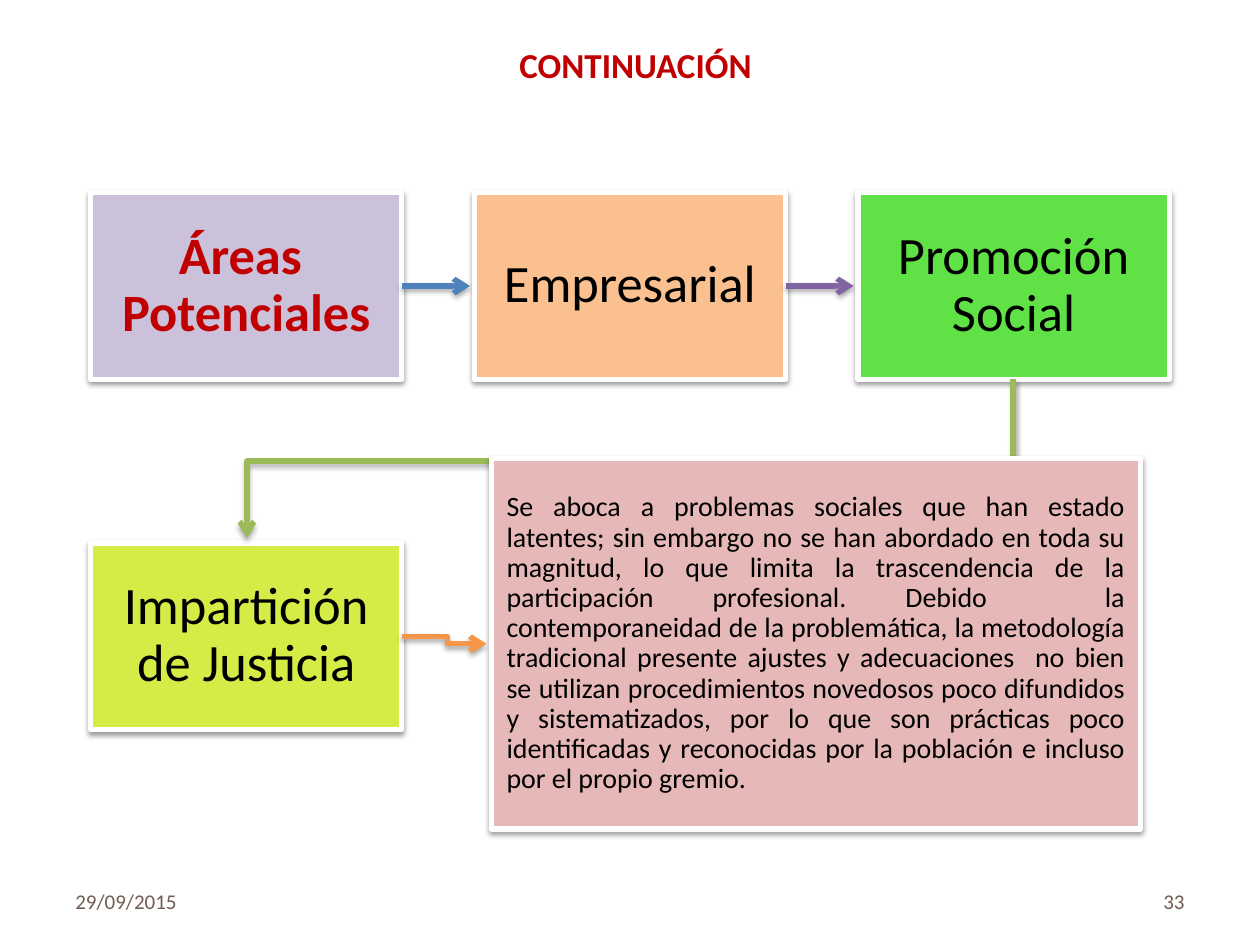
import pptx
import pptx.util
import pptx.oxml
import pptx.oxml.ns
import pptx.dml.color
import pptx.enum.shapes
import pptx.enum.text

Inches = pptx.util.Inches
Pt = pptx.util.Pt
RGBColor = pptx.dml.color.RGBColor
ALIGN = pptx.enum.text.PP_ALIGN
MIDDLE = pptx.enum.text.MSO_ANCHOR.MIDDLE
RECTANGLE = pptx.enum.shapes.MSO_SHAPE.RECTANGLE
STRAIGHT = pptx.enum.shapes.MSO_CONNECTOR.STRAIGHT

RED = RGBColor(0xC0, 0x00, 0x00)
BLACK = RGBColor(0x00, 0x00, 0x00)
WHITE = RGBColor(0xFF, 0xFF, 0xFF)
BROWN = RGBColor(0x72, 0x5B, 0x51)
LILAC = RGBColor(0xCC, 0xC1, 0xDA)
PEACH = RGBColor(0xFA, 0xC0, 0x90)
GREEN = RGBColor(0x60, 0xE1, 0x46)
LIME = RGBColor(0xD5, 0xEC, 0x46)
PINK = RGBColor(0xE6, 0xB9, 0xB8)
BLUE = RGBColor(0x4F, 0x81, 0xBD)
PURPLE = RGBColor(0x80, 0x64, 0xA2)
OLIVE = RGBColor(0x9B, 0xBB, 0x59)
ORANGE = RGBColor(0xF7, 0x96, 0x46)


def write(part, text, size, color, align, bold=False, inset=None, spacing=None):
    frame = part.text_frame
    frame.word_wrap = True
    frame.vertical_anchor = MIDDLE
    if inset is not None:
        frame.margin_left = frame.margin_right = Inches(inset)
        frame.margin_top = frame.margin_bottom = Inches(inset)
    paragraph = frame.paragraphs[0]
    paragraph.alignment = align
    paragraph.line_spacing = spacing
    run = paragraph.add_run()
    run.text = text
    run.font.name = "Calibri"
    run.font.size = Pt(size)
    run.font.bold = bold
    run.font.color.rgb = color


def outline(part, color, opacity, distance, arrow=False):
    part.line.color.rgb = color
    part.line.width = Pt(3)
    namespace = pptx.oxml.ns.nsdecls("a")
    properties = part._element.spPr
    if arrow:
        properties.find(pptx.oxml.ns.qn("a:ln")).append(
            pptx.oxml.parse_xml(f'<a:tailEnd {namespace} type="arrow"/>'))
    properties.append(pptx.oxml.parse_xml(
        f'<a:effectLst {namespace}><a:outerShdw blurRad="{Pt(3.1)}" dist="{Pt(distance)}" '
        f'dir="5400000" rotWithShape="0"><a:srgbClr val="000000">'
        f'<a:alpha val="{opacity * 1000}"/></a:srgbClr></a:outerShdw></a:effectLst>'))


presentation = pptx.Presentation()
presentation.slide_width = Inches(10)
presentation.slide_height = Inches(7.5)
shapes = presentation.slides.add_slide(presentation.slide_layouts[6]).shapes

for text, left, top, width, height, size, color, align, bold in [
    ("CONTINUACIÓN", 0.83, 0.29, 8.43, 0.44, 20, RED, ALIGN.CENTER, True),
    ("29/09/2015", 0.5, 6.95, 2.33, 0.4, 12, BROWN, ALIGN.LEFT, False),
    ("33", 7.17, 6.95, 2.33, 0.4, 12, BROWN, ALIGN.RIGHT, False),
]:
    label = shapes.add_textbox(Inches(left), Inches(top), Inches(width), Inches(height))
    write(label, text, size, color, align, bold)

areas = []
for text, column, top, fill, color, bold in [
    ("Áreas  Potenciales", 0, 1.53, LILAC, RED, True),
    ("Empresarial", 1, 1.53, PEACH, BLACK, False),
    ("Promoción Social", 2, 1.53, GREEN, BLACK, False),
    ("Impartición de Justicia", 0, 4.31, LIME, BLACK, False),
]:
    area = shapes.add_shape(RECTANGLE, Inches(0.72 + 3.045 * column), Inches(top),
                            Inches(2.47), Inches(1.48))
    area.fill.solid()
    area.fill.fore_color.rgb = fill
    outline(area, WHITE, 38, 1.6)
    write(area, text, 30, color, ALIGN.CENTER, bold, 0.23, 0.9)
    areas.append(area)

for area, color in zip(areas, [BLUE, PURPLE]):
    right = area.left + area.width
    middle = area.top + area.height // 2
    arrow = shapes.add_connector(STRAIGHT, right, middle, right + Inches(0.54), middle)
    arrow.begin_connect(area, 3)
    outline(arrow, color, 35, 1.8, arrow=True)

for color, points in [
    (OLIVE, [(8.04, 3.01), (8.04, 3.66), (1.96, 3.66), (1.96, 4.27)]),
    (ORANGE, [(3.19, 5.05), (3.55, 5.05), (3.55, 5.11), (3.86, 5.11)]),
]:
    corners = [(Inches(x), Inches(y)) for x, y in points]
    builder = shapes.build_freeform(*corners[0])
    builder.add_line_segments(corners[1:], close=False)
    bent_arrow = builder.convert_to_shape()
    bent_arrow.fill.background()
    outline(bent_arrow, color, 35, 1.8, arrow=True)

explanation = shapes.add_shape(RECTANGLE, Inches(3.9), Inches(3.64), Inches(5.15), Inches(2.94))
explanation.fill.solid()
explanation.fill.fore_color.rgb = PINK
outline(explanation, WHITE, 38, 1.6)
write(
    explanation,
    "Se aboca a problemas sociales que han estado latentes; sin embargo no se han abordado "
    "en toda su magnitud, lo que limita la trascendencia de la participación profesional. "
    "Debido  la contemporaneidad de la problemática, la metodología tradicional presente "
    "ajustes y adecuaciones  no bien se utilizan procedimientos novedosos poco difundidos y "
    "sistematizados, por lo que son prácticas poco identificadas y reconocidas por la "
    "población e incluso por el propio gremio.",
    16, BLACK, ALIGN.JUSTIFY, inset=0.12, spacing=0.9)

presentation.save("out.pptx")
